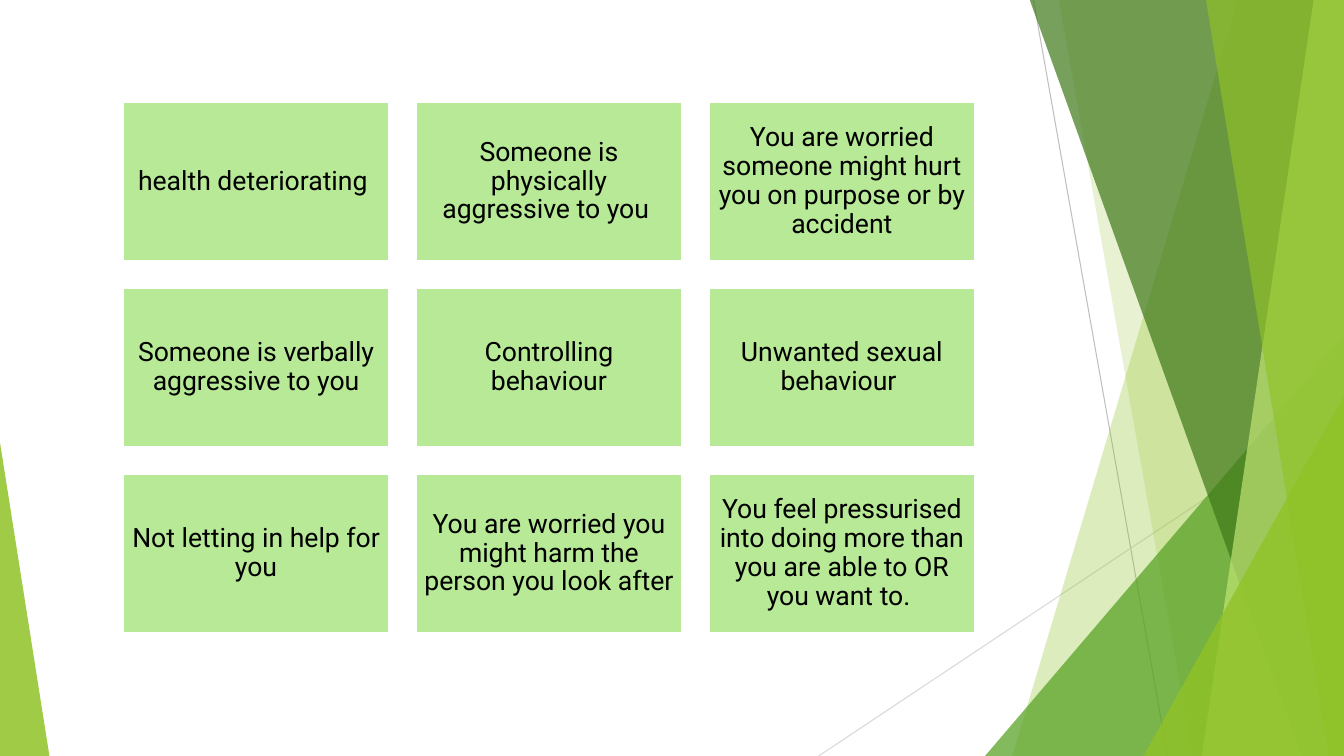
import pptx
import pptx.dml.color
import pptx.enum.shapes
import pptx.enum.text
import pptx.oxml
import pptx.oxml.ns
import pptx.util
from dataclasses import dataclass

Inches = pptx.util.Inches


@dataclass(frozen=True)
class Theme:
    lime: str = "90C226"
    green: str = "54A021"
    forest: str = "3F7819"
    pale_lime: str = "C0E474"
    card: str = "B7E996"
    card_line: str = "FFFFFF"
    text: str = "000000"
    steep_line: str = "BFBFBF"
    shallow_line: str = "D9D9D9"
    font: str = "Roboto"
    text_size: float = 19
    card_line_width: float = 1.5
    thin_line_width: float = 0.75


THEME = Theme()
SLIDE_WIDTH, SLIDE_HEIGHT = 13.33, 7.5
BAND_TOP = -0.01
GRID_LEFT, GRID_TOP, GRID_RIGHT, GRID_BOTTOM = 1.22, 1.01, 9.67, 6.28
CARD_WIDTH, CARD_HEIGHT = 2.64, 1.58
CARD_INSET = 0.08

WARNING_SIGNS = [
    [
        "health deteriorating ",
        "Someone is physically aggressive to you ",
        "You are worried someone might hurt you on purpose or by accident",
    ],
    [
        "Someone is verbally aggressive to you",
        "Controlling behaviour",
        "Unwanted sexual behaviour ",
    ],
    [
        "Not letting in help for you",
        "You are worried you might harm the person you look after ",
        "You feel pressurised into doing more than you are able to OR you want to. ",
    ],
]


def rgb(color):
    return pptx.dml.color.RGBColor.from_string(color)


def fill_translucent(shape, color, opacity):
    shape.shadow.inherit = False
    shape.line.fill.background()
    shape.fill.solid()
    shape.fill.fore_color.rgb = rgb(color)
    color_element = shape.fill._xPr.find(".//" + pptx.oxml.ns.qn("a:srgbClr"))
    alpha = pptx.oxml.parse_xml(
        f'<a:alpha {pptx.oxml.ns.nsdecls("a")} val="{opacity * 1000}"/>'
    )
    color_element.append(alpha)


def add_thin_line(slide, start, end, color):
    connector = slide.shapes.add_connector(
        pptx.enum.shapes.MSO_CONNECTOR.STRAIGHT,
        *(Inches(value) for value in (*start, *end)),
    )
    connector.line.color.rgb = rgb(color)
    connector.line.width = pptx.util.Pt(THEME.thin_line_width)
    effects = pptx.oxml.parse_xml(f'<a:effectLst {pptx.oxml.ns.nsdecls("a")}/>')
    connector._element.spPr.append(effects)


def add_band(slide, top_left, bottom_left, color, opacity):
    builder = slide.shapes.build_freeform(Inches(top_left), Inches(BAND_TOP))
    corners = [
        (SLIDE_WIDTH, BAND_TOP),
        (SLIDE_WIDTH, SLIDE_HEIGHT),
        (bottom_left, SLIDE_HEIGHT),
    ]
    builder.add_line_segments([(Inches(x), Inches(y)) for x, y in corners])
    fill_translucent(builder.convert_to_shape(), color, opacity)


def add_corner_triangle(slide, left, top, width, apex, color, opacity):
    triangle = slide.shapes.add_shape(
        pptx.enum.shapes.MSO_SHAPE.ISOSCELES_TRIANGLE,
        Inches(left), Inches(top), Inches(width), Inches(SLIDE_HEIGHT - top),
    )
    triangle.adjustments[0] = apex
    fill_translucent(triangle, color, opacity)


def add_background(slide):
    add_thin_line(slide, (10.25, 0), (11.58, SLIDE_HEIGHT), THEME.steep_line)
    add_thin_line(slide, (SLIDE_WIDTH, 4.03), (8.12, SLIDE_HEIGHT), THEME.shallow_line)
    add_band(slide, 12.28, 10.04, THEME.lime, 30)
    add_band(slide, 10.5, 11.83, THEME.lime, 20)
    add_corner_triangle(slide, 9.77, 3.33, 3.56, 1, THEME.green, 72)
    add_band(slide, 10.21, 12.91, THEME.forest, 70)
    add_band(slide, 13.03, 11.92, THEME.pale_lime, 70)
    add_band(slide, 11.96, 13.18, THEME.lime, 65)
    add_corner_triangle(slide, 11.34, 3.93, 1.99, 1, THEME.lime, 80)
    add_corner_triangle(slide, 0, 4.39, 0.49, 0, THEME.lime, 85)


def add_card(slide, left, top, text):
    card = slide.shapes.add_shape(
        pptx.enum.shapes.MSO_SHAPE.RECTANGLE,
        Inches(left), Inches(top), Inches(CARD_WIDTH), Inches(CARD_HEIGHT),
    )
    card.shadow.inherit = False
    card.fill.solid()
    card.fill.fore_color.rgb = rgb(THEME.card)
    card.line.color.rgb = rgb(THEME.card_line)
    card.line.width = pptx.util.Pt(THEME.card_line_width)
    frame = card.text_frame
    frame.word_wrap = True
    frame.vertical_anchor = pptx.enum.text.MSO_ANCHOR.MIDDLE
    frame.margin_left = frame.margin_right = Inches(CARD_INSET)
    frame.margin_top = frame.margin_bottom = Inches(CARD_INSET)
    frame.text = text
    paragraph = frame.paragraphs[0]
    paragraph.alignment = pptx.enum.text.PP_ALIGN.CENTER
    paragraph.line_spacing = 0.9
    font = paragraph.runs[0].font
    font.name = THEME.font
    font.size = pptx.util.Pt(THEME.text_size)
    font.color.rgb = rgb(THEME.text)


def add_card_grid(slide, rows):
    row_step = (GRID_BOTTOM - GRID_TOP - CARD_HEIGHT) / (len(rows) - 1)
    column_step = (GRID_RIGHT - GRID_LEFT - CARD_WIDTH) / (len(rows[0]) - 1)
    for row, texts in enumerate(rows):
        for column, text in enumerate(texts):
            add_card(
                slide,
                GRID_LEFT + column * column_step,
                GRID_TOP + row * row_step,
                text,
            )


def main():
    presentation = pptx.Presentation()
    presentation.slide_width = Inches(SLIDE_WIDTH)
    presentation.slide_height = Inches(SLIDE_HEIGHT)
    slide = presentation.slides.add_slide(presentation.slide_layouts[6])
    add_background(slide)
    add_card_grid(slide, WARNING_SIGNS)
    presentation.save("out.pptx")


if __name__ == "__main__":
    main()
